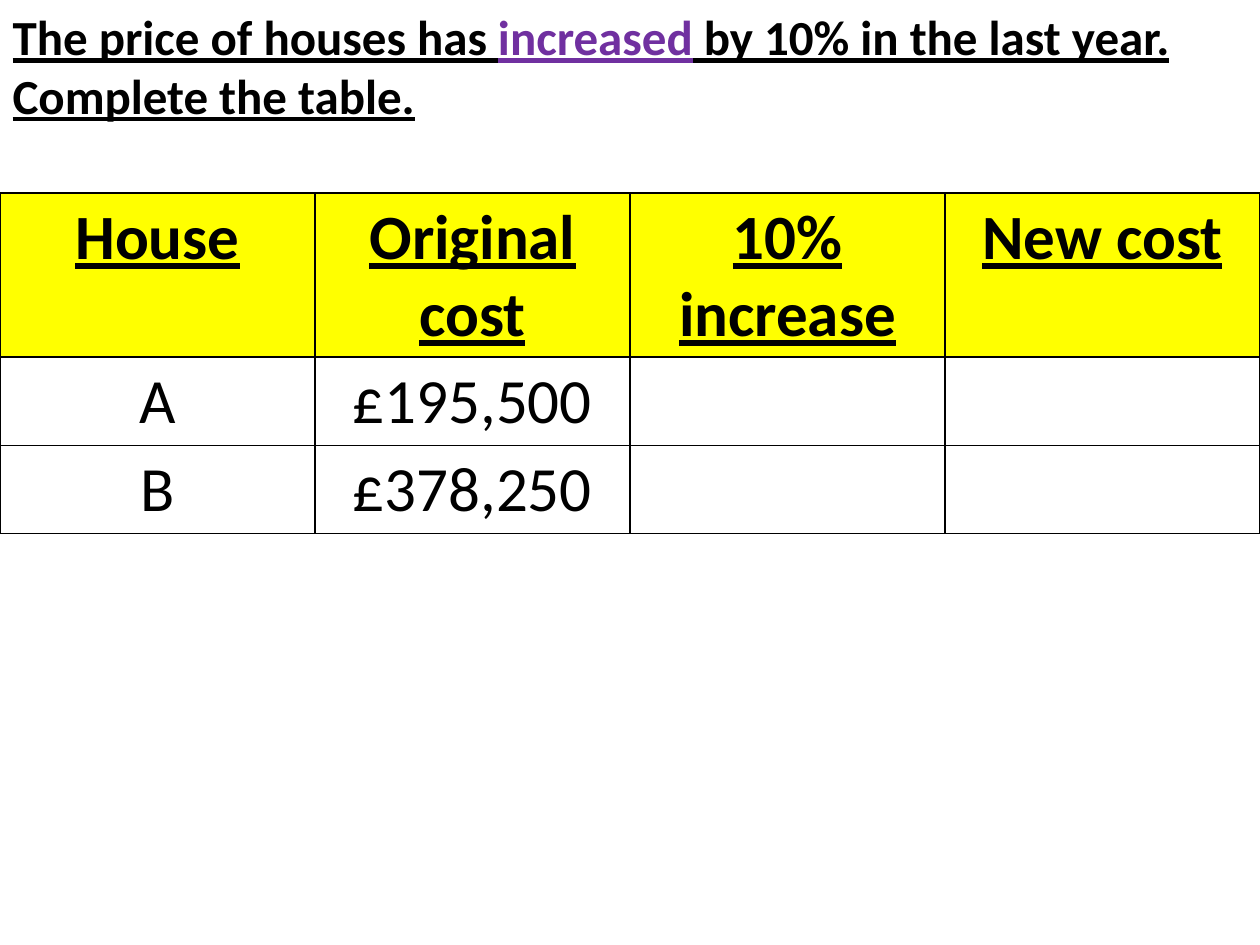
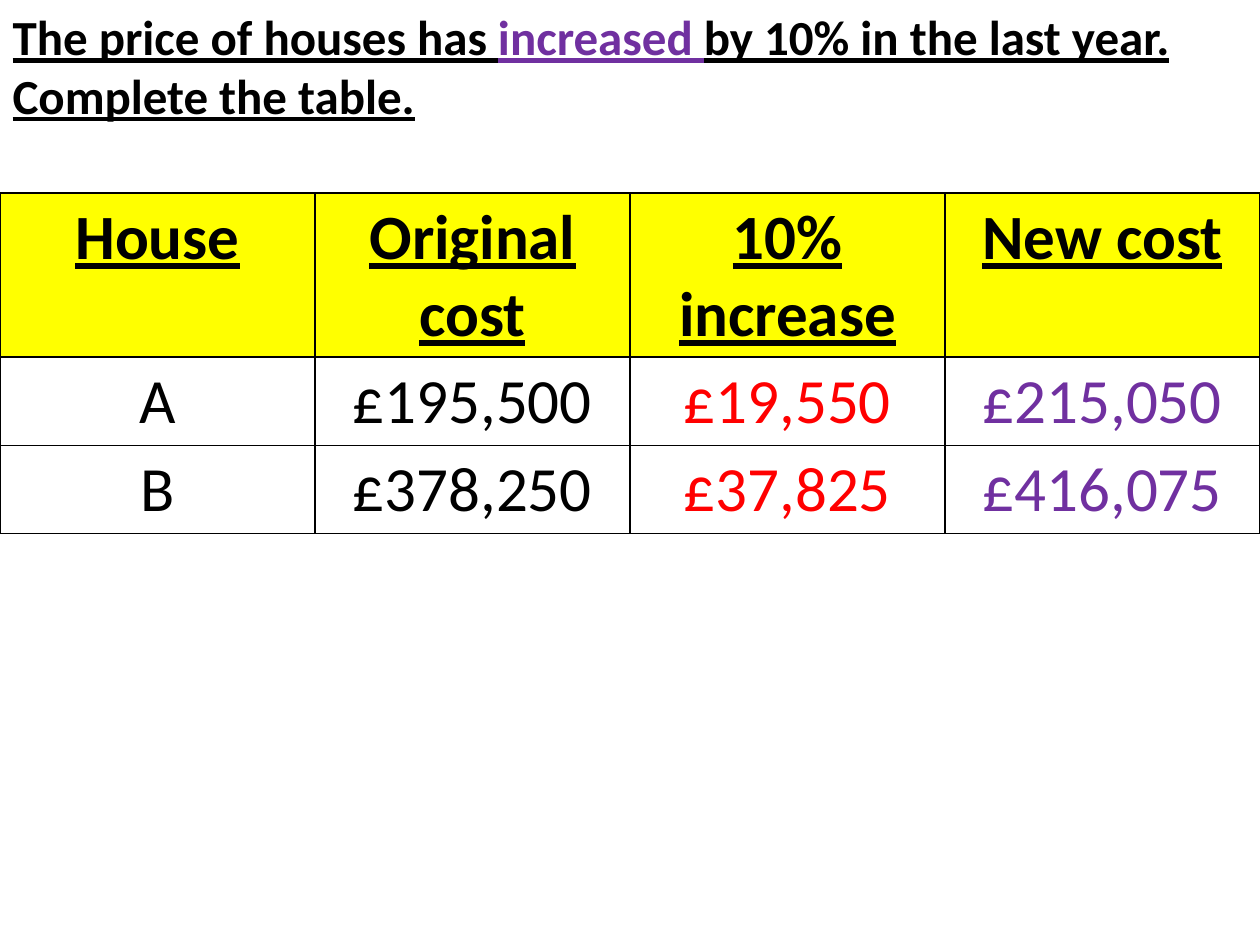
"""Build two slides on a 10% rise in house prices: the question and its answers."""
from dataclasses import dataclass

from lxml.etree import SubElement
from pptx import Presentation
from pptx.dml.color import RGBColor
from pptx.enum.text import MSO_ANCHOR, MSO_AUTO_SIZE, PP_ALIGN
from pptx.oxml.ns import qn
from pptx.util import Pt


@dataclass(frozen=True)
class Theme:
    font: str = "Calibri"
    black: str = "000000"
    white: str = "FFFFFF"
    yellow: str = "FFFF00"
    red: str = "FF0000"
    purple: str = "7030A0"
    title: int = 28
    body: int = 36
    border: int = 1


theme = Theme()
SCALE = 914400 / 126


def px(value):
    return round(value * SCALE)


def write(para, text, size=theme.body, color=theme.black, strong=False, align=PP_ALIGN.CENTER):
    para.alignment = align
    run = para.add_run()
    run.text = text
    font = run.font
    font.name = theme.font
    font.size = Pt(size)
    font.bold = font.underline = strong
    font.color.rgb = RGBColor.from_string(color)


WIDTH, HEIGHT = 1260, 945
TABLE_TOP = 193
HEIGHTS = [164, 88, 88]
HEADS = ["House", "Original cost", "10% increase", "New cost"]
INKS = [theme.black, theme.black, theme.red, theme.purple]
HOUSES = [("A", 195500), ("B", 378250)]
SLIDES = [
    (False, ("increased", " by 10% in the last year.")),
    (True, ("increased ", "by 10% in the last year.")),
]

deck = Presentation()
deck.slide_width, deck.slide_height = px(WIDTH), px(HEIGHT)

for solved, (change, ending) in SLIDES:
    slide = deck.slides.add_slide(deck.slide_layouts[5])
    title = slide.shapes.title
    title.left, title.top, title.width, title.height = px(0), px(0), px(WIDTH), px(131)
    frame = title.text_frame
    frame.word_wrap = True
    frame.auto_size = MSO_AUTO_SIZE.SHAPE_TO_FIT_TEXT
    frame.vertical_anchor = MSO_ANCHOR.TOP
    lines = [
        [("The price of houses has ", theme.black), (change, theme.purple), (ending, theme.black)],
        [("Complete the table.", theme.black)],
    ]
    for index, line in enumerate(lines):
        para = frame.add_paragraph() if index else frame.paragraphs[0]
        for text, color in line:
            write(para, text, size=theme.title, color=color, strong=True, align=PP_ALIGN.LEFT)

    rows = [HEADS]
    for name, cost in HOUSES:
        rise = cost // 10
        answers = [f"£{rise:,}", f"£{cost + rise:,}"] if solved else ["", ""]
        rows.append([name, f"£{cost:,}", *answers])

    table = slide.shapes.add_table(
        len(rows), len(HEADS), px(0), px(TABLE_TOP), px(WIDTH), px(sum(HEIGHTS))
    ).table
    for column in table.columns:
        column.width = px(WIDTH / len(HEADS))
    for r, values in enumerate(rows):
        table.rows[r].height = px(HEIGHTS[r])
        head = r == 0
        for c, text in enumerate(values):
            cell = table.cell(r, c)
            if text:
                color = theme.black if head else INKS[c]
                write(cell.text_frame.paragraphs[0], text, color=color, strong=head)
            props = cell._tc.get_or_add_tcPr()
            for side in ("lnL", "lnR", "lnT", "lnB"):
                edge = SubElement(props, qn(f"a:{side}"), w=str(Pt(theme.border)))
                fill = SubElement(edge, qn("a:solidFill"))
                SubElement(fill, qn("a:srgbClr"), val=theme.black)
            cell.fill.solid()
            cell.fill.fore_color.rgb = RGBColor.from_string(theme.yellow if head else theme.white)

deck.save("out.pptx")
